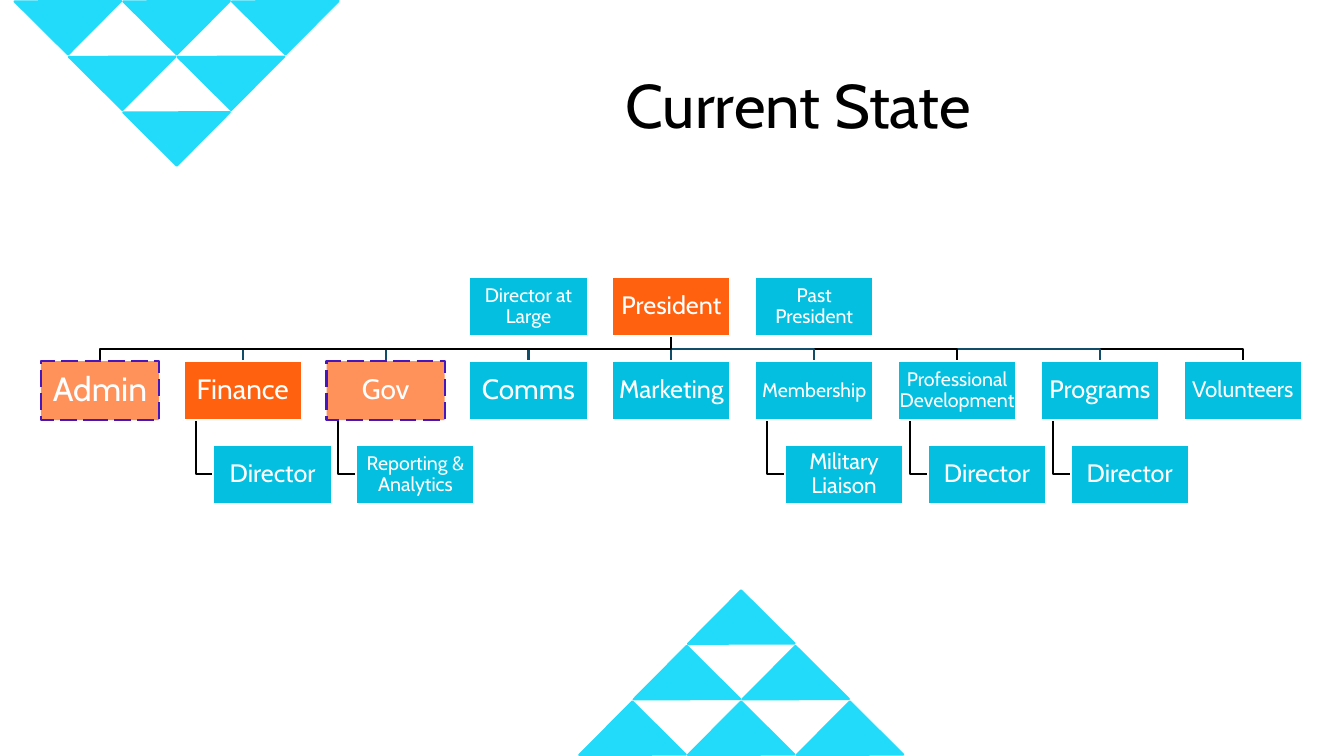
"""Build the Current State organisation chart slide."""
from lxml.etree import SubElement
from pptx import Presentation
from pptx.dml.color import RGBColor
from pptx.enum.dml import MSO_LINE
from pptx.enum.shapes import MSO_CONNECTOR, MSO_SHAPE
from pptx.enum.text import MSO_ANCHOR, PP_ALIGN
from pptx.oxml.ns import qn
from pptx.util import Cm, Pt

BLACK = RGBColor(0x00, 0x00, 0x00)
WHITE = RGBColor(0xFF, 0xFF, 0xFF)
BLUE = RGBColor(0x05, 0xBF, 0xE0)
ORANGE = RGBColor(0xFF, 0x61, 0x0F)
LIGHT_ORANGE = RGBColor(0xFF, 0x92, 0x5B)
PURPLE = RGBColor(0x46, 0x17, 0xBC)
DARK_TEAL = RGBColor(0x11, 0x4D, 0x68)
CYAN = RGBColor(0x22, 0xDB, 0xFA)

FONT = "Cabin"
LINE_WIDTH = Pt(1.5)
BOX_WIDTH, BOX_HEIGHT = 2.98, 1.49
FIRST_LEFT, COLUMN_PITCH = 1.03, 3.6
TOP_ROW, AREA_ROW, REPORT_ROW = 6.98, 9.1, 11.21
REPORT_INDENT, STEM_INDENT = 0.75, 0.3
PRESIDENT_COLUMN = 4
TRIANGLE_SIZE, TRIANGLE_PITCH, TRIANGLE_STEP = 1.9, 2.74, 1.4

LEADERS = [
    (3, "Director at Large", 14, BLUE),
    (PRESIDENT_COLUMN, "President", 18, ORANGE),
    (5, "Past President", 14, BLUE),
]
AREAS = [
    ("Admin", 24, LIGHT_ORANGE, BLACK, None),
    ("Finance", 20, ORANGE, DARK_TEAL, ("Director", 18)),
    ("Gov", 20, LIGHT_ORANGE, DARK_TEAL, ("Reporting & Analytics", 14)),
    ("Comms", 20, BLUE, DARK_TEAL, None),
    ("Marketing", 18, BLUE, DARK_TEAL, None),
    ("Membership", 14, BLUE, DARK_TEAL, ("Military Liaison", 16)),
    ("Professional Development", 14, BLUE, BLACK, ("Director", 18)),
    ("Programs", 18, BLUE, DARK_TEAL, ("Director", 18)),
    ("Volunteers", 16, BLUE, BLACK, None),
]
TRIANGLE_GROUPS = [(3.5, 1.88, -1, 314.8), (17.73, 15.27, 1, 134.8)]

presentation = Presentation()
presentation.slide_width = Cm(33.87)
presentation.slide_height = Cm(19.05)
slide = presentation.slides.add_slide(presentation.slide_layouts[5])


def add_box(left, top, text, size, fill):
    box = slide.shapes.add_shape(
        MSO_SHAPE.RECTANGLE, Cm(left), Cm(top), Cm(BOX_WIDTH), Cm(BOX_HEIGHT))
    box.shadow.inherit = False
    box.fill.solid()
    box.fill.fore_color.rgb = fill
    box.line.width = LINE_WIDTH
    box.line.color.rgb = WHITE
    if fill == LIGHT_ORANGE:
        box.line.color.rgb = PURPLE
        box.line.dash_style = MSO_LINE.LONG_DASH
    frame = box.text_frame
    frame.word_wrap = True
    frame.vertical_anchor = MSO_ANCHOR.MIDDLE
    frame.margin_left = frame.margin_right = Cm(0.03)
    frame.margin_top = frame.margin_bottom = Cm(0.03)
    paragraph = frame.paragraphs[0]
    paragraph.text = text
    paragraph.alignment = PP_ALIGN.CENTER
    paragraph.line_spacing = 0.9
    paragraph.font.name = FONT
    paragraph.font.size = Pt(size)
    paragraph.font.color.rgb = WHITE
    return box


def add_elbow(points, color):
    start, *others = [(Cm(x), Cm(y)) for x, y in points]
    builder = slide.shapes.build_freeform(*start)
    builder.add_line_segments(others, close=False)
    elbow = builder.convert_to_shape()
    elbow.shadow.inherit = False
    elbow.fill.background()
    elbow.line.color.rgb = color
    elbow.line.width = LINE_WIDTH


title = slide.shapes.title
title.left, title.top, title.width, title.height = Cm(15.52), Cm(0.89), Cm(29.21), Cm(3.68)
title.text_frame.vertical_anchor = MSO_ANCHOR.MIDDLE
paragraph = title.text_frame.paragraphs[0]
paragraph.text = "Current State"
paragraph.alignment = PP_ALIGN.LEFT
paragraph.line_spacing = 0.9
paragraph.font.name = FONT
paragraph.font.size = Pt(44)
paragraph.font.color.rgb = BLACK

column_lefts = [FIRST_LEFT + column * COLUMN_PITCH for column in range(len(AREAS))]
president_center = column_lefts[PRESIDENT_COLUMN] + BOX_WIDTH / 2
president_bottom = TOP_ROW + BOX_HEIGHT
branch_y = (president_bottom + AREA_ROW) / 2
report_y = REPORT_ROW + BOX_HEIGHT / 2

for left, (name, size, fill, line_color, report) in reversed(list(zip(column_lefts, AREAS))):
    center = left + BOX_WIDTH / 2
    if center == president_center:
        trunk = slide.shapes.add_connector(
            MSO_CONNECTOR.STRAIGHT, Cm(center), Cm(president_bottom), Cm(center), Cm(AREA_ROW))
        trunk.line.color.rgb = line_color
        trunk.line.width = LINE_WIDTH
        SubElement(trunk._element.spPr, qn("a:effectLst"))
    else:
        add_elbow([(president_center, president_bottom), (president_center, branch_y),
                   (center, branch_y), (center, AREA_ROW)], line_color)
    if report:
        stem_x = left + STEM_INDENT
        add_elbow([(stem_x, AREA_ROW + BOX_HEIGHT), (stem_x, report_y),
                   (left + REPORT_INDENT, report_y)], BLACK)

boxes = {}
for column, name, size, fill in LEADERS:
    boxes[name] = add_box(column_lefts[column], TOP_ROW, name, size, fill)
for left, (name, size, fill, line_color, report) in zip(column_lefts, AREAS):
    boxes[name] = add_box(left, AREA_ROW, name, size, fill)
    if report:
        add_box(left + REPORT_INDENT, REPORT_ROW, *report, BLUE)
trunk.begin_connect(boxes["President"], 2)
trunk.end_connect(boxes["Marketing"], 0)

for apex_left, apex_top, direction, rotation in TRIANGLE_GROUPS:
    for row in range(3):
        for position in range(row + 1):
            triangle = slide.shapes.add_shape(
                MSO_SHAPE.RIGHT_TRIANGLE,
                Cm(apex_left + (position - row / 2) * TRIANGLE_PITCH),
                Cm(apex_top + direction * row * TRIANGLE_STEP),
                Cm(TRIANGLE_SIZE), Cm(TRIANGLE_SIZE))
            triangle.rotation = rotation
            triangle.shadow.inherit = False
            triangle.fill.solid()
            triangle.fill.fore_color.rgb = CYAN
            triangle.line.color.rgb = CYAN
            triangle.line.width = LINE_WIDTH

presentation.save("out.pptx")
